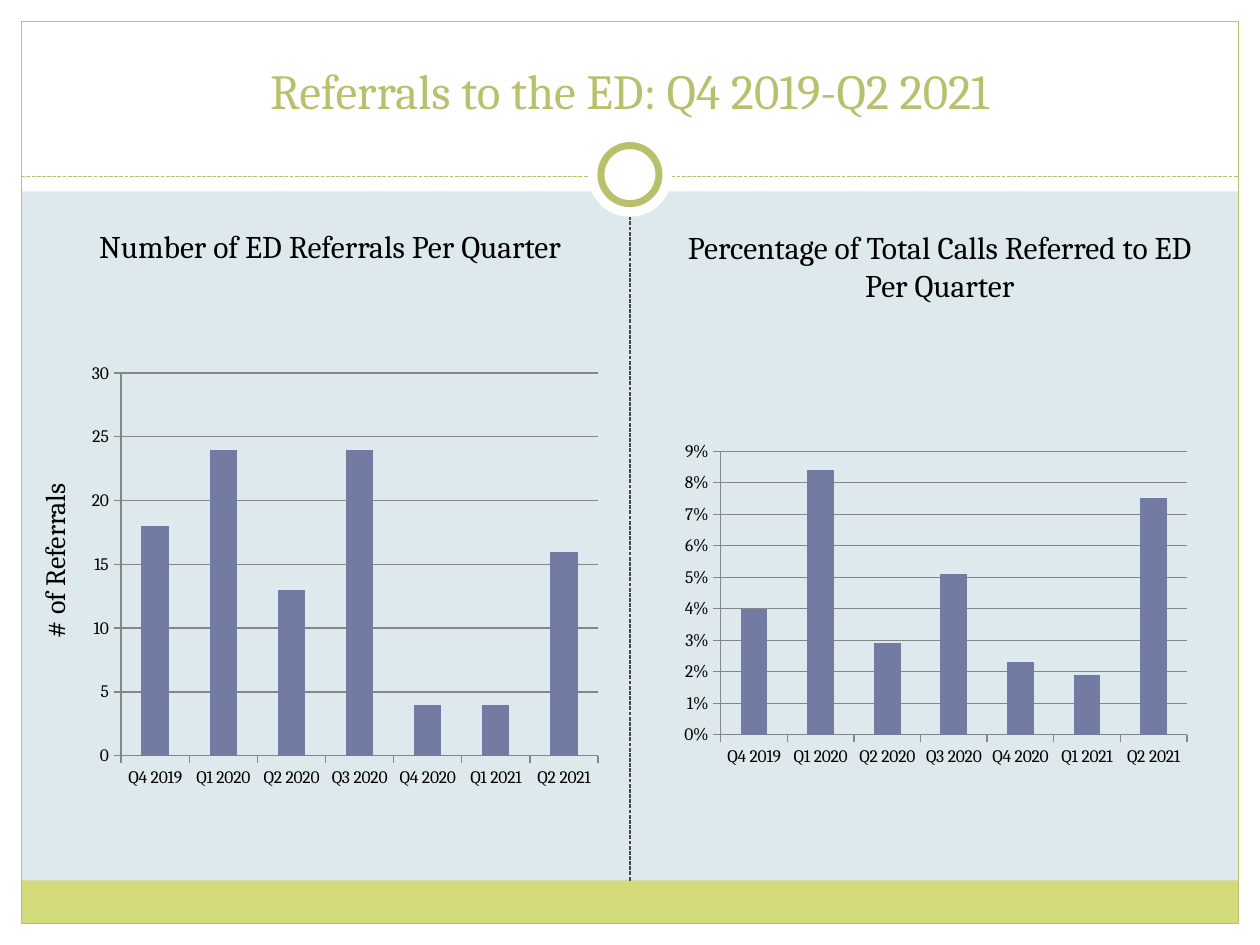
"""Build a slide comparing the number and percentage of ED referrals per quarter."""
from lxml.etree import SubElement
from pptx import Presentation
from pptx.chart.data import CategoryChartData
from pptx.dml.color import RGBColor
from pptx.enum.chart import XL_CHART_TYPE as ChartType, XL_TICK_MARK as Tick
from pptx.enum.dml import MSO_LINE as Dash
from pptx.enum.shapes import MSO_CONNECTOR as Connector, MSO_SHAPE as Shape
from pptx.enum.text import MSO_ANCHOR as Anchor, PP_ALIGN as Align
from pptx.oxml.ns import qn
from pptx.util import Cm, Pt

FONT = "Cambria"
WHITE, BLACK, GREEN, LIME = "FFFFFF", "000000", "B9C06C", "D2DA7A"
PALE, SLATE, BAR, GRID = "DDE9EC", "464653", "727CA3", "868686"
WIDTH, HEIGHT, MARGIN = 25.4, 19.05, 0.43
HEADER, BAND_TOP, RULE_Y, RING_Y = 3.86, 17.75, 3.56, 3.52
INNER_WIDTH, BOTTOM = WIDTH - 2 * MARGIN, HEIGHT - MARGIN

TITLE = "Referrals to the ED: Q4 2019-Q2 2021"
AXIS_LABEL = "# of Referrals"
QUARTERS = ["Q4 2019", "Q1 2020", "Q2 2020", "Q3 2020", "Q4 2020", "Q1 2021", "Q2 2021"]
PANELS = [
    dict(heading="Number of ED Referrals Per Quarter", heading_box=(0.84, 4.45, 11.63, 1.02),
         values=[18, 24, 13, 24, 4, 4, 16], number_format="General", top=30, step=5,
         chart_box=(1.7, 6.99, 10.57, 8.89), plot=(0.07, 0.06, 0.91, 0.87)),
    dict(heading="Percentage of Total Calls Referred to ED Per Quarter",
         heading_box=(13.13, 4.47, 11.63, 1.8),
         values=[0.04, 0.084, 0.029, 0.051, 0.023, 0.019, 0.075],
         number_format="0%", top=0.09, step=0.01,
         chart_box=(11.99, 8.26, 12.7, 7.62), plot=(0.2, 0.11, 0.74, 0.75)),
]
BORDERS = [
    (0, BOTTOM, WIDTH, MARGIN),
    (0, 0, WIDTH, HEADER),
    (0, 0, MARGIN, HEIGHT),
    (WIDTH - MARGIN, 0, MARGIN, HEIGHT),
]


def rgb(value):
    return RGBColor.from_string(value)


def cm(*lengths):
    return [Cm(length) for length in lengths]


def add_block(slide, kind, box, fill=None, line=None, weight=0.75):
    block = slide.shapes.add_shape(kind, *cm(*box))
    block.shadow.inherit = False
    if fill:
        block.fill.solid()
        block.fill.fore_color.rgb = rgb(fill)
    else:
        block.fill.background()
    if line:
        block.line.color.rgb = rgb(line)
        block.line.width = Pt(weight)
    else:
        block.line.fill.background()
    return block


def add_circle(slide, diameter, **style):
    corner = (WIDTH - diameter) / 2, RING_Y - diameter / 2
    add_block(slide, Shape.OVAL, (*corner, diameter, diameter), **style)


def add_dashes(slide, start, end, color):
    dashes = slide.shapes.add_connector(Connector.STRAIGHT, *cm(*start, *end))
    dashes.line.color.rgb = rgb(color)
    dashes.line.width = Pt(0.75)
    dashes.line.dash_style = Dash.SQUARE_DOT
    SubElement(dashes.element.spPr, qn("a:effectLst"))
    return dashes


def add_text(slide, text, box, size=18, color=BLACK, align=Align.CENTER,
             anchor=Anchor.TOP, rotation=0):
    textbox = slide.shapes.add_textbox(*cm(*box))
    textbox.rotation = rotation
    frame = textbox.text_frame
    frame.word_wrap = True
    frame.vertical_anchor = anchor
    paragraph = frame.paragraphs[0]
    paragraph.alignment = align
    run = paragraph.add_run()
    run.text = text
    run.font.name = FONT
    run.font.size = Pt(size)
    run.font.color.rgb = rgb(color)


def set_plot_area(chart, fractions):
    plot_area = chart.element.find(".//" + qn("c:plotArea"))
    layout = plot_area.find(qn("c:layout"))
    if layout is None:
        layout = SubElement(plot_area, qn("c:layout"))
        plot_area.insert(0, layout)
    manual = SubElement(layout, qn("c:manualLayout"))
    settings = [("layoutTarget", "inner"), ("xMode", "edge"), ("yMode", "edge")]
    settings += zip("xywh", fractions)
    for tag, value in settings:
        SubElement(manual, qn("c:" + tag)).set("val", str(value))


def add_columns(slide, panel):
    data = CategoryChartData(number_format=panel["number_format"])
    data.categories = QUARTERS
    data.add_series("Series 1", panel["values"])
    chart = slide.shapes.add_chart(
        ChartType.COLUMN_CLUSTERED, *cm(*panel["chart_box"]), data).chart
    chart.has_legend = False
    chart.has_title = False
    chart.font.name = FONT
    chart.font.size = Pt(10)
    chart.font.color.rgb = rgb(BLACK)
    columns = chart.plots[0]
    columns.gap_width = 150
    columns.vary_by_categories = False
    fill = columns.series[0].format.fill
    fill.solid()
    fill.fore_color.rgb = rgb(BAR)
    scale = chart.value_axis
    scale.minimum_scale, scale.maximum_scale = 0, panel["top"]
    scale.major_unit = panel["step"]
    scale.tick_labels.number_format = panel["number_format"]
    scale.tick_labels.number_format_is_linked = False
    scale.has_major_gridlines = True
    for axis in (chart.category_axis, scale):
        axis.major_tick_mark = Tick.OUTSIDE
    for lines in (chart.category_axis, scale, scale.major_gridlines):
        lines.format.line.color.rgb = rgb(GRID)
        lines.format.line.width = Pt(0.75)
    set_plot_area(chart, panel["plot"])


def main():
    deck = Presentation()
    deck.slide_width, deck.slide_height = cm(WIDTH, HEIGHT)
    slide = deck.slides.add_slide(deck.slide_layouts[6])
    slide.background.fill.solid()
    slide.background.fill.fore_color.rgb = rgb(PALE)

    for border in BORDERS:
        add_block(slide, Shape.RECTANGLE, border, fill=WHITE)
    band = add_block(slide, Shape.RECTANGLE,
                     (MARGIN, BAND_TOP, INNER_WIDTH, BOTTOM - BAND_TOP), fill=LIME)
    add_block(slide, Shape.RECTANGLE,
              (MARGIN, MARGIN, INNER_WIDTH, BOTTOM - MARGIN), line=GREEN)
    add_dashes(slide, (MARGIN, RULE_Y), (WIDTH - MARGIN, RULE_Y), GREEN)
    add_circle(slide, 1.7, fill=WHITE)
    add_circle(slide, 1.17, fill=WHITE, line=GREEN, weight=4)
    divider = add_dashes(slide, (WIDTH / 2, BAND_TOP), (WIDTH / 2, RING_Y + 0.85), SLATE)
    divider.begin_connect(band, 0)

    add_text(slide, TITLE, (0.84, 0.43, 23.7, 2.11), size=28, color=GREEN,
             anchor=Anchor.BOTTOM)
    for panel in PANELS:
        add_text(slide, panel["heading"], panel["heading_box"])
        add_columns(slide, panel)
    add_text(slide, AXIS_LABEL, (-0.91, 10.64, 4.01, 0.94), size=16,
             align=Align.LEFT, rotation=270)
    deck.save("out.pptx")


if __name__ == "__main__":
    main()
